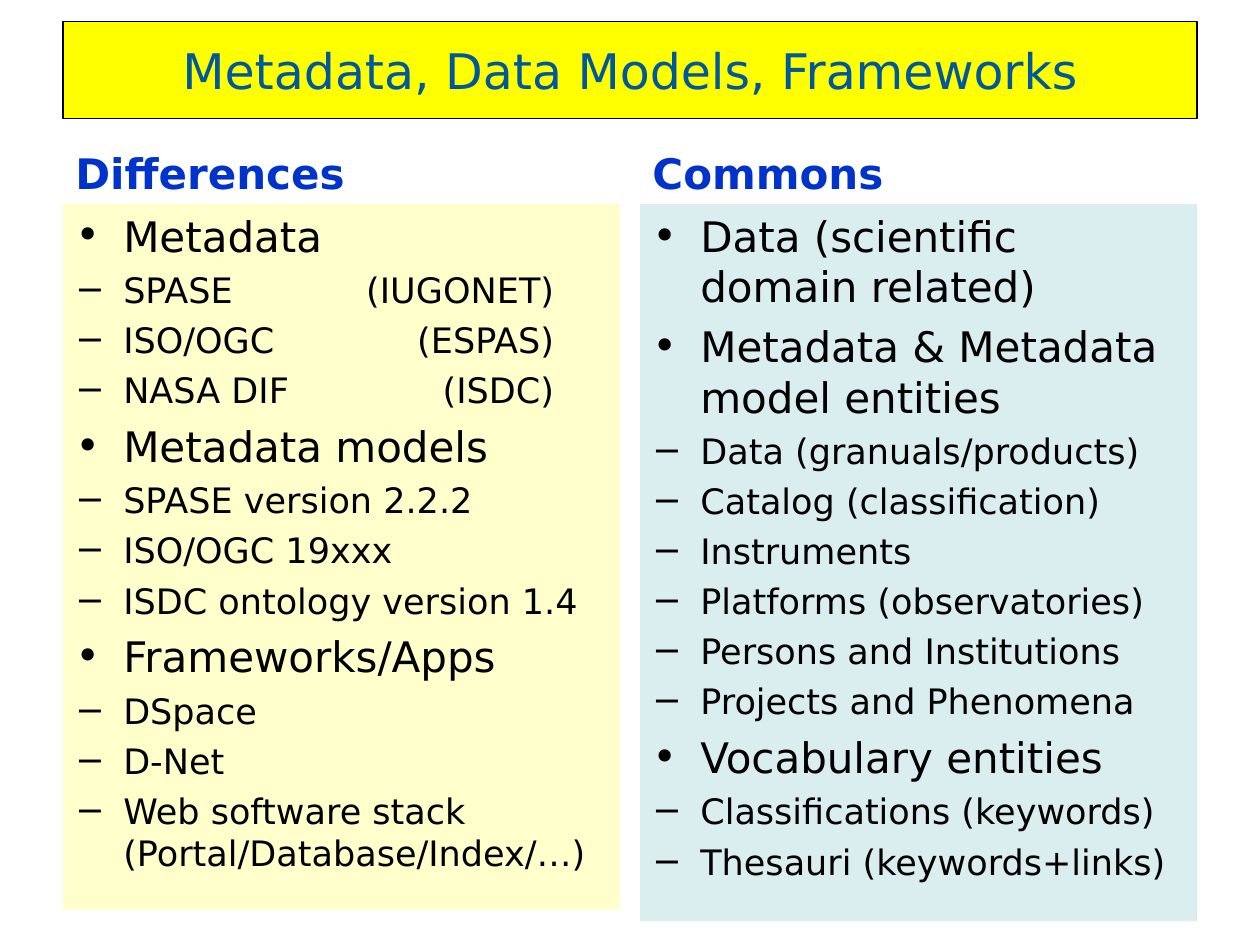
from lxml import etree
from pptx import Presentation
from pptx.dml.color import RGBColor
from pptx.enum.text import MSO_ANCHOR as Anchor, MSO_AUTO_SIZE as AutoSize, PP_ALIGN as Align
from pptx.oxml.ns import qn
from pptx.util import Inches, Pt

COLORS = {
    "title_fill": "FFFF00", "title_text": "00589C", "border": "000000",
    "heading": "0033CC", "text": "000000",
    "differences": "FFFFCC", "commons": "DAEDEF",
}
FONT = "DejaVu Sans"
LEFT, COLUMN_WIDTH, COLUMN_PITCH = 0.5, 4.42, 4.58
HEADING_TOP, LIST_TOP = 0.92, 1.62
INDENT, TAB_POSITION = 0.38, 3.8

# Each column: heading, fill name, list height, groups of (topic, details)
COLUMNS = [
    ("Differences", "differences", 5.6, [
        ("Metadata", ["SPASE\t(IUGONET)", "ISO/OGC\t(ESPAS)", "NASA DIF\t(ISDC)"]),
        ("Metadata models", ["SPASE version 2.2.2", "ISO/OGC 19xxx",
                             "ISDC ontology version 1.4"]),
        ("Frameworks/Apps", ["DSpace", "D-Net",
                             "Web software stack (Portal/Database/Index/…)"]),
    ]),
    ("Commons", "commons", 5.69, [
        ("Data (scientific domain related)", []),
        ("Metadata & Metadata model entities", [
            "Data (granuals/products)", "Catalog (classification)", "Instruments",
            "Platforms (observatories)", "Persons and Institutions",
            "Projects and Phenomena"]),
        ("Vocabulary entities", ["Classifications (keywords)",
                                 "Thesauri (keywords+links)"]),
    ]),
]


def rgb(name):
    return RGBColor.from_string(COLORS[name])


def write(paragraph, text, size, color="text", bold=False, align=Align.LEFT):
    paragraph.alignment = align
    run = paragraph.add_run()
    run.text = text
    run.font.name = FONT
    run.font.size = Pt(size)
    run.font.bold = bold
    run.font.color.rgb = rgb(color)


def add_bullet(paragraph, character):
    """Give the paragraph a hanging bullet and, for tabbed text, a right tab."""
    properties = paragraph._p.get_or_add_pPr()
    properties.set("marL", str(Inches(INDENT)))
    properties.set("indent", str(-Inches(INDENT)))
    etree.SubElement(properties, qn("a:buFont"), typeface=FONT)
    etree.SubElement(properties, qn("a:buChar"), char=character)
    tabs = etree.SubElement(properties, qn("a:tabLst"))
    etree.SubElement(tabs, qn("a:tab"), pos=str(Inches(TAB_POSITION)), algn="r")


class SlideBuilder:
    def __init__(self, presentation):
        self.slide = presentation.slides.add_slide(presentation.slide_layouts[5])

    def title(self, text):
        title = self.slide.shapes.title
        title.left, title.top = Inches(LEFT), Inches(0.17)
        title.width, title.height = Inches(9), Inches(0.77)
        title.fill.solid()
        title.fill.fore_color.rgb = rgb("title_fill")
        title.line.color.rgb = rgb("border")
        title.line.width = Pt(0.75)
        frame = title.text_frame
        frame.auto_size = AutoSize.NONE
        frame.vertical_anchor = Anchor.MIDDLE
        write(frame.paragraphs[0], text, 28, color="title_text", align=Align.CENTER)

    def text_box(self, left, top, height, anchor=Anchor.TOP, fill=None):
        box = self.slide.shapes.add_textbox(
            Inches(left), Inches(top), Inches(COLUMN_WIDTH), Inches(height))
        if fill:
            box.fill.solid()
            box.fill.fore_color.rgb = rgb(fill)
        frame = box.text_frame
        frame.word_wrap = True
        frame.auto_size = AutoSize.NONE
        frame.vertical_anchor = anchor
        return frame

    def heading(self, text, left):
        frame = self.text_box(left, HEADING_TOP, LIST_TOP - HEADING_TOP, Anchor.BOTTOM)
        write(frame.paragraphs[0], text, 24, color="heading", bold=True)

    def bullet_list(self, groups, left, height, fill):
        frame = self.text_box(left, LIST_TOP, height, fill=fill)
        items = []
        for topic, details in groups:
            items.append((topic, "•", 24))
            items.extend((detail, "−", 20) for detail in details)
        for index, (text, character, size) in enumerate(items):
            paragraph = frame.add_paragraph() if index else frame.paragraphs[0]
            if index:
                paragraph.space_before = Pt(round(size * 0.23, 1))
            add_bullet(paragraph, character)
            write(paragraph, text, size)


def main():
    presentation = Presentation()
    presentation.slide_width, presentation.slide_height = Inches(10), Inches(7.5)
    builder = SlideBuilder(presentation)
    builder.title("Metadata, Data Models, Frameworks")
    for index, (heading, fill, height, groups) in enumerate(COLUMNS):
        left = LEFT + index * COLUMN_PITCH
        builder.heading(heading, left)
        builder.bullet_list(groups, left, height, fill)
    presentation.save("out.pptx")


if __name__ == "__main__":
    main()
